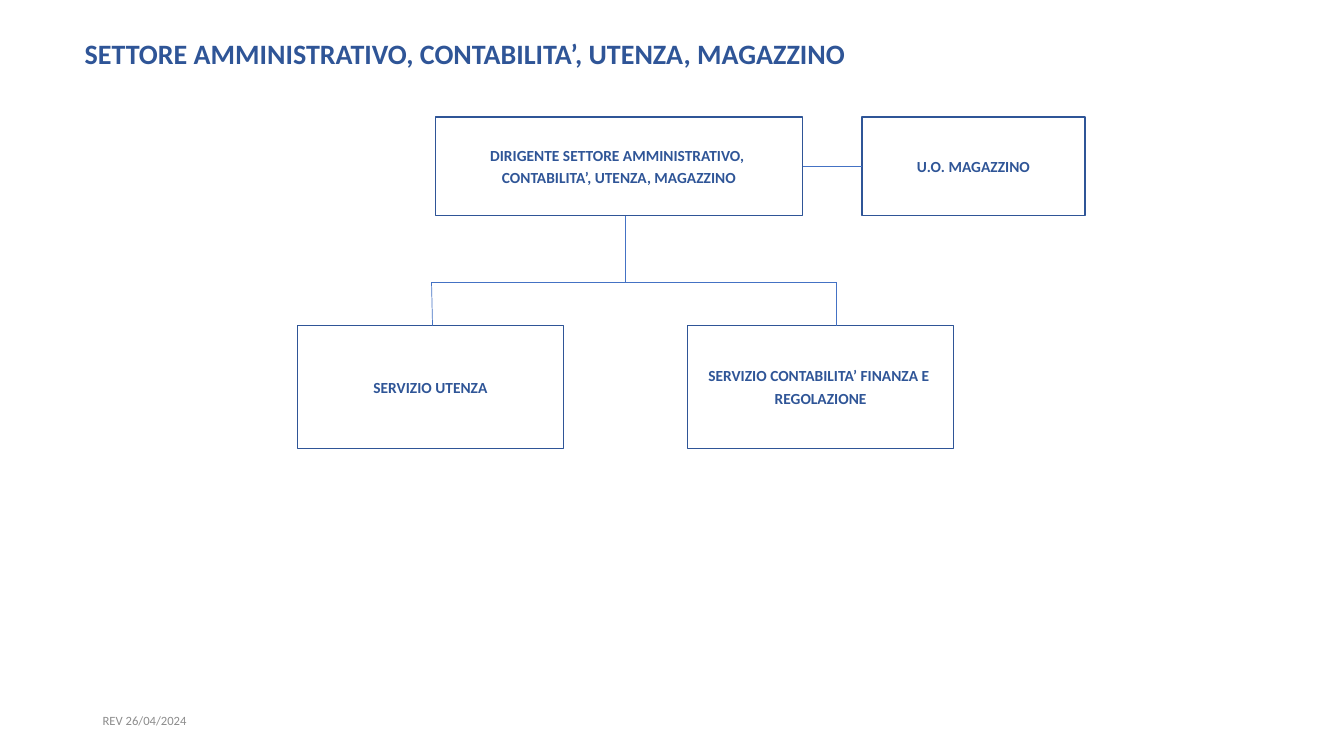
from lxml.etree import SubElement
from pptx import Presentation
from pptx.dml.color import RGBColor
from pptx.enum.shapes import MSO_CONNECTOR, MSO_SHAPE
from pptx.enum.text import MSO_ANCHOR, MSO_AUTO_SIZE, PP_ALIGN
from pptx.oxml.ns import qn
from pptx.util import Pt

PX = 9144
COLOURS = {"navy": "2F5597", "link": "4472C4", "grey": "8C8C8C", "white": "FFFFFF"}


def colour(name):
    return RGBColor.from_string(COLOURS[name])


class OrgChart:
    font = "Calibri"

    def __init__(self, slide):
        self.slide = slide

    def set_text(self, frame, text, size, ink, bold=False, align=PP_ALIGN.LEFT, after=0):
        frame.text = text
        frame.word_wrap = True
        frame.auto_size = MSO_AUTO_SIZE.NONE
        frame.vertical_anchor = MSO_ANCHOR.MIDDLE
        for paragraph in frame.paragraphs:
            paragraph.alignment = align
            paragraph.space_after = Pt(after)
            for run in paragraph.runs:
                run.font.name = self.font
                run.font.size = Pt(size)
                run.font.bold = bold
                run.font.color.rgb = colour(ink)

    def inset(self, frame, left, top, right, bottom):
        frame.margin_left, frame.margin_top = left * PX, top * PX
        frame.margin_right, frame.margin_bottom = right * PX, bottom * PX

    def title(self, text, left, top, width, height):
        heading = self.slide.shapes.title
        heading.left, heading.top = left * PX, top * PX
        heading.width, heading.height = width * PX, height * PX
        self.set_text(heading.text_frame, text, 20, "navy", bold=True)
        self.inset(heading.text_frame, 9, 0, 0, 0)

    def unit(self, text, left, top, width, height):
        box = self.slide.shapes.add_shape(
            MSO_SHAPE.RECTANGLE, left * PX, top * PX, width * PX, height * PX)
        box.shadow.inherit = False
        box.fill.solid()
        box.fill.fore_color.rgb = colour("white")
        box.line.color.rgb = colour("navy")
        box.line.width = Pt(1)
        self.set_text(box.text_frame, text, 11, "navy", True, PP_ALIGN.CENTER, 3)
        self.inset(box.text_frame, 5, 5, 5, 5)

    def link(self, x1, y1, x2, y2):
        line = self.slide.shapes.add_connector(
            MSO_CONNECTOR.STRAIGHT, x1 * PX, y1 * PX, x2 * PX, y2 * PX)
        line.line.color.rgb = colour("link")
        line.line.width = Pt(0.5)
        SubElement(line._element.spPr, qn("a:effectLst"))

    def note(self, text, left, top, width, height):
        box = self.slide.shapes.add_textbox(left * PX, top * PX, width * PX, height * PX)
        self.set_text(box.text_frame, text, 9, "grey")


def main():
    deck = Presentation()
    deck.slide_width, deck.slide_height = 1333 * PX, 750 * PX
    chart = OrgChart(deck.slides.add_slide(deck.slide_layouts[5]))

    chart.title("SETTORE AMMINISTRATIVO, CONTABILITA’, UTENZA, MAGAZZINO", 75, 28, 1182, 50)

    head_top, head_height = 116, 98
    head_left, head_width = 432, 364
    store_left, store_width = 855, 221
    head_bottom = head_top + head_height
    chart.unit("DIRIGENTE SETTORE AMMINISTRATIVO, \nCONTABILITA’, UTENZA, MAGAZZINO",
               head_left, head_top, head_width, head_height)
    chart.unit("U.O. MAGAZZINO", store_left, head_top, store_width, head_height)
    head_middle = head_top + head_height // 2
    chart.link(head_left + head_width, head_middle, store_left, head_middle)

    trunk, branch_y, service_top = 620, 280, 323
    services = [
        ("SERVIZIO UTENZA", 295, 428, 429),
        ("SERVIZIO CONTABILITA’ FINANZA E \nREGOLAZIONE", 682, 830, 830),
    ]
    chart.link(trunk, head_bottom, trunk, branch_y)
    chart.link(services[0][2], branch_y, services[-1][2], branch_y)
    for service, left, branch_x, entry_x in services:
        chart.unit(service, left, service_top, 264, 122)
        chart.link(branch_x, branch_y, entry_x, service_top)

    chart.note("REV 26/04/2024", 92, 695, 300, 40)
    deck.save("out.pptx")


if __name__ == "__main__":
    main()
